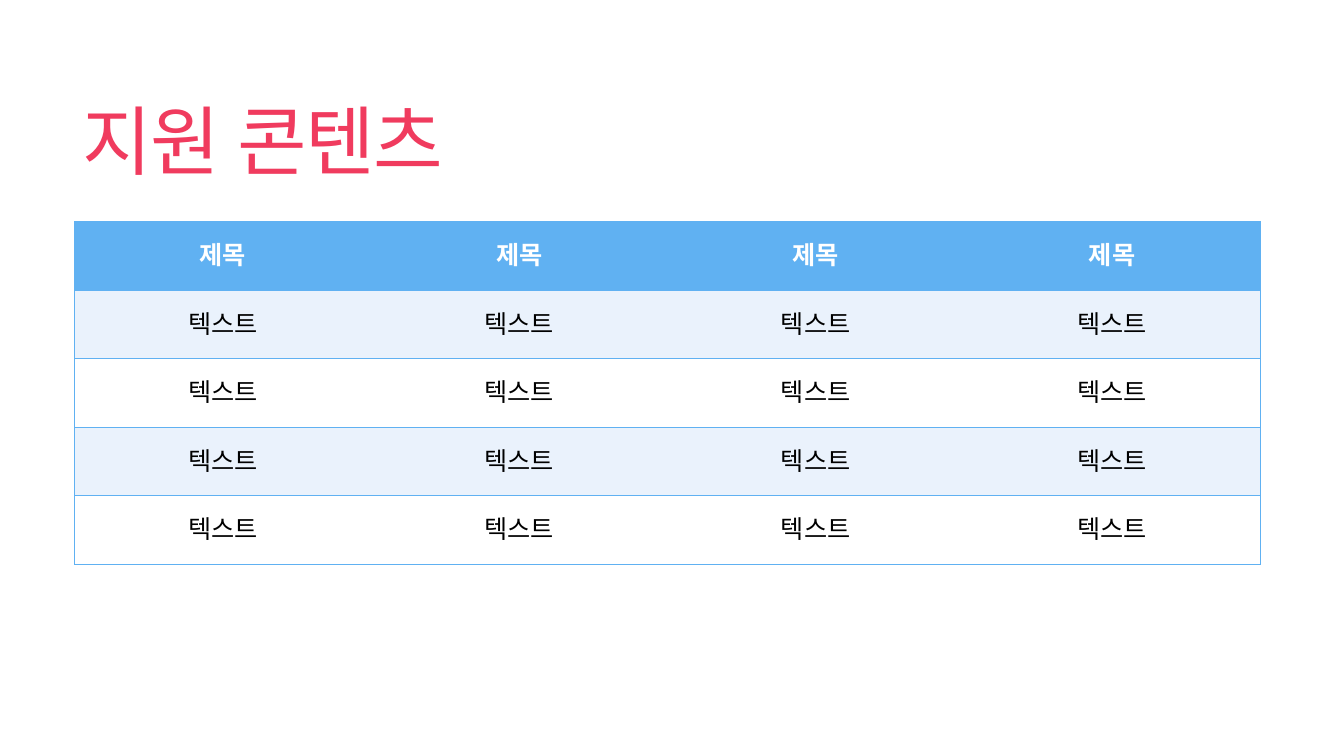
from lxml.etree import SubElement
from pptx import Presentation
from pptx.dml.color import RGBColor
from pptx.enum.text import MSO_ANCHOR, PP_ALIGN
from pptx.oxml.ns import qn
from pptx.util import Inches, Pt

TITLE = "지원 콘텐츠"
ROWS = [["제목"] * 4] + [["텍스트"] * 4 for _ in range(4)]

FONT = "Arial"
PINK, BLUE, PALE, WHITE, BLACK = "F03B5E", "60B1F2", "EAF2FC", "FFFFFF", "000000"
TABLE_LEFT, TABLE_TOP = 0.74, 2.2
COLUMN_WIDTH, ROW_HEIGHT = 2.94, 0.68


def color(hex_code):
    return RGBColor.from_string(hex_code)


def add_text(paragraph, text, size, hex_code, bold=False):
    run = paragraph.add_run()
    run.text = text
    run.font.name = FONT
    run.font.size = Pt(size)
    run.font.bold = bold
    run.font.color.rgb = color(hex_code)
    SubElement(run.font._element, qn("a:ea"), typeface=FONT)
    return run


def set_borders(cell, visible_sides):
    """Draw the visible sides in blue and switch the other sides off."""
    properties = cell._tc.get_or_add_tcPr()
    for side in "LRTB":
        border = SubElement(properties, qn(f"a:ln{side}"), w=str(Pt(1)))
        if side in visible_sides:
            fill = SubElement(border, qn("a:solidFill"))
            SubElement(fill, qn("a:srgbClr"), val=BLUE)
        else:
            SubElement(border, qn("a:noFill"))


def add_title(slide):
    box = slide.shapes.add_textbox(Inches(0.72), Inches(0.55), Inches(11.78), Inches(1.81))
    frame = box.text_frame
    frame.word_wrap = True
    frame.vertical_anchor = MSO_ANCHOR.MIDDLE
    paragraph = frame.paragraphs[0]
    paragraph.line_spacing = 0.85
    run = add_text(paragraph, TITLE, 54, PINK)
    run.font._element.set("spc", "-120")


def add_content_table(slide):
    row_count, column_count = len(ROWS), len(ROWS[0])
    table = slide.shapes.add_table(
        row_count, column_count, Inches(TABLE_LEFT), Inches(TABLE_TOP),
        Inches(COLUMN_WIDTH * column_count), Inches(ROW_HEIGHT * row_count)).table
    table.horz_banding = False
    for column in table.columns:
        column.width = Inches(COLUMN_WIDTH)
    for r, labels in enumerate(ROWS):
        table.rows[r].height = Inches(ROW_HEIGHT)
        header = r == 0
        background = BLUE if header else PALE if r % 2 else WHITE
        for c, label in enumerate(labels):
            cell = table.cell(r, c)
            sides = "TB" + "L" * (c == 0) + "R" * (c == column_count - 1)
            set_borders(cell, sides)
            cell.fill.solid()
            cell.fill.fore_color.rgb = color(background)
            cell.vertical_anchor = MSO_ANCHOR.MIDDLE
            paragraph = cell.text_frame.paragraphs[0]
            paragraph.alignment = PP_ALIGN.CENTER
            add_text(paragraph, label, 18, WHITE if header else BLACK, header)


def main():
    presentation = Presentation()
    presentation.slide_width = Inches(13.33)
    presentation.slide_height = Inches(7.5)
    slide = presentation.slides.add_slide(presentation.slide_layouts[6])
    add_title(slide)
    add_content_table(slide)
    presentation.save("out.pptx")


if __name__ == "__main__":
    main()
